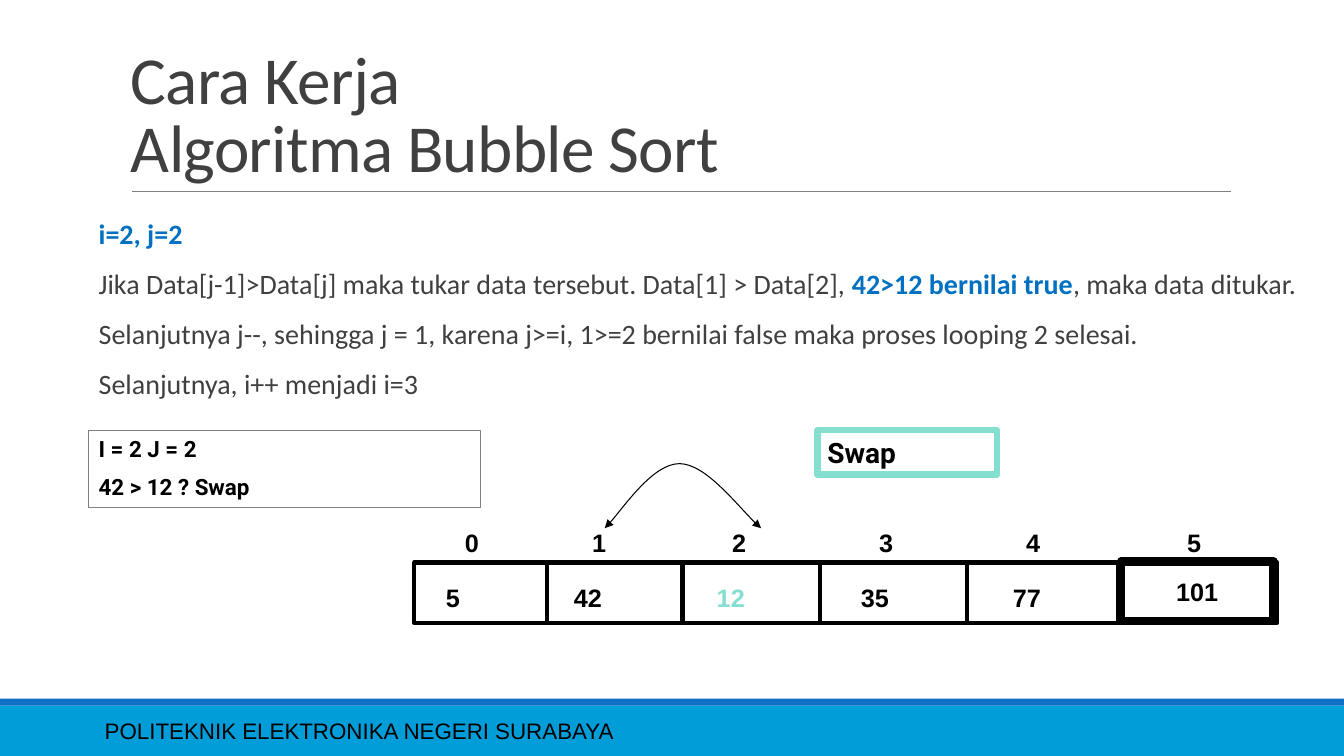
from lxml import etree
from pptx import Presentation
from pptx.dml.color import RGBColor
from pptx.enum.shapes import MSO_CONNECTOR, MSO_SHAPE
from pptx.enum.text import MSO_ANCHOR, PP_ALIGN
from pptx.oxml.ns import qn
from pptx.util import Pt

RECTANGLE = MSO_SHAPE.RECTANGLE
STRAIGHT = MSO_CONNECTOR.STRAIGHT
TOP, MIDDLE, BOTTOM = MSO_ANCHOR.TOP, MSO_ANCHOR.MIDDLE, MSO_ANCHOR.BOTTOM
LEFT, CENTER = PP_ALIGN.LEFT, PP_ALIGN.CENTER

COLORS = {
    "black": "000000",
    "title": "404040",
    "blue": "0070C0",
    "rule": "808080",
    "mint": "85DFD0",
    "footer": "009DD9",
    "stripe": "0F6FC6",
}

# Index, index centre, value, value centre
CELLS = [
    ("0", 337, "5", 323.5),
    ("1", 428, "42", 420),
    ("2", 528, "12", 522),
    ("3", 633, "35", 625),
    ("4", 738, "77", 733.5),
]
DIVIDERS = [391, 487.5, 585.5, 690.5, 799]
ARRAY_TOP, ARRAY_BOTTOM = 401.8, 445


def color(name):
    return RGBColor.from_string(COLORS[name])


def add_rectangle(page, left, top, width, height, fill=None, line=None, weight=1):
    box = page.shapes.add_shape(RECTANGLE, Pt(left), Pt(top), Pt(width), Pt(height))
    box.shadow.inherit = False
    if fill:
        box.fill.solid()
        box.fill.fore_color.rgb = color(fill)
    else:
        box.fill.background()
    if line:
        box.line.color.rgb = color(line)
        box.line.width = Pt(weight)
    else:
        box.line.fill.background()
    return box


def add_line(page, x1, y1, x2, y2, line, weight):
    rule = page.shapes.add_connector(STRAIGHT, Pt(x1), Pt(y1), Pt(x2), Pt(y2))
    rule.line.color.rgb = color(line)
    rule.line.width = Pt(weight)
    etree.SubElement(rule._element.spPr, qn("a:effectLst"))


def write(box, paragraphs, font, size, align=LEFT, anchor=TOP, before=0, after=0,
          spacing=None, tracking=None):
    """Fill a shape with paragraphs, each a list of (text, colour, bold) runs."""
    frame = box.text_frame
    frame.word_wrap = True
    frame.vertical_anchor = anchor
    for number, runs in enumerate(paragraphs):
        para = frame.add_paragraph() if number else frame.paragraphs[0]
        para.alignment = align
        para.space_before = Pt(before if number else 0)
        para.space_after = Pt(after)
        if spacing:
            para.line_spacing = spacing
        for text, tint, bold in runs:
            if text == "\n":
                para.add_line_break()
                continue
            span = para.add_run()
            span.text = text
            span.font.name = font
            span.font.size = Pt(size)
            span.font.bold = bold
            span.font.color.rgb = color(tint)
            if tracking:
                span.font._element.set("spc", str(tracking))


def add_text(page, left, top, width, height, paragraphs, font, size, **layout):
    box = page.shapes.add_textbox(Pt(left), Pt(top), Pt(width), Pt(height))
    write(box, paragraphs, font, size, **layout)


def add_label(page, center, top, text, tint="black"):
    add_text(page, center - 25, top, 50, 29.5, [[(text, tint, True)]], "Arial", 18,
             align=CENTER)


def add_swap_arrow(page, start, points):
    """Draw a double-headed Bezier arrow; points holds three per curve."""
    builder = page.shapes.build_freeform(Pt(start[0]), Pt(start[1]))
    builder.add_line_segments([(Pt(x), Pt(y)) for x, y in points], close=False)
    arrow = builder.convert_to_shape()
    arrow.shadow.inherit = False
    arrow.fill.background()
    arrow.line.color.rgb = color("black")
    arrow.line.width = Pt(0.75)
    segments = list(arrow._element.iter(qn("a:lnTo")))
    for first in range(0, len(segments), 3):
        curve = etree.Element(qn("a:cubicBezTo"))
        segments[first].addprevious(curve)
        for segment in segments[first:first + 3]:
            curve.append(segment[0])
            segment.getparent().remove(segment)
    for end in ("a:headEnd", "a:tailEnd"):
        etree.SubElement(arrow.line._get_or_add_ln(), qn(end), type="triangle")


def add_frame(page):
    add_rectangle(page, 0, 504, 960, 36, fill="footer")
    add_rectangle(page, 0, 499, 960, 5, fill="stripe")
    add_line(page, 94.3, 136.8, 879.1, 136.8, "rule", 0.5)
    add_text(page, 67.7, 507.6, 605.5, 28.8,
             [[("POLITEKNIK ELEKTRONIKA NEGERI SURABAYA", "black", False)]],
             "Arial", 16, anchor=MIDDLE)
    add_text(page, 86.4, 22.3, 792, 114.5,
             [[("Cara Kerja", "title", False), ("\n", "title", False),
               ("Algoritma Bubble Sort", "title", False)]],
             "Calibri", 48, anchor=BOTTOM, spacing=0.85, tracking=-50)


def add_explanation(page):
    paragraphs = [
        [("i=2, j=2", "blue", True)],
        [("Jika Data[j-1]>Data[j] maka tukar data tersebut. Data[1] > Data[2], ",
          "title", False),
         ("42>12 bernilai true", "blue", True),
         (", maka data ditukar.", "title", False)],
        [("Selanjutnya j--, sehingga j = 1, karena j>=i, 1>=2 bernilai false "
          "maka proses looping 2 selesai.", "title", False)],
        [("Selanjutnya, i++ menjadi i=3", "title", False)],
    ]
    add_text(page, 63.4, 154.1, 872, 140, paragraphs, "Calibri", 20,
             before=12, after=2, spacing=0.9)


def add_array(page):
    add_rectangle(page, 296, ARRAY_TOP, 616.3, ARRAY_BOTTOM - ARRAY_TOP,
                  line="black", weight=3)
    for x in DIVIDERS:
        add_line(page, x, ARRAY_TOP, x, ARRAY_BOTTOM, "black", 3)
    for index, index_center, value, value_center in CELLS:
        add_label(page, index_center, 373, index)
        add_label(page, value_center, 412.3, value, "mint" if value == "12" else "black")
    add_label(page, 853, 373, "5")
    sorted_cell = add_rectangle(page, 800.6, 401, 109, 42.5, line="black", weight=6)
    write(sorted_cell, [[("101", "black", True)]], "Arial", 18, align=CENTER,
          anchor=MIDDLE)


def main():
    deck = Presentation()
    deck.slide_width, deck.slide_height = Pt(960), Pt(540)
    page = deck.slides.add_slide(deck.slide_layouts[6])
    add_frame(page)
    add_explanation(page)
    add_swap_arrow(page, (432, 377.3),
                   [(440.6, 369.4), (466.6, 331.2), (485.3, 331.2),
                    (504, 331.2), (531.4, 367.2), (543.6, 377.3)])
    comparison = add_rectangle(page, 63.4, 307.2, 280, 55.4, line="rule", weight=0.75)
    write(comparison, [[("I = 2 J = 2", "black", True)],
                       [("42 > 12 ? Swap", "black", True)]], "Roboto", 16, before=8)
    action = add_rectangle(page, 583.9, 307.4, 128.2, 31.7, line="mint", weight=4.5)
    write(action, [[("Swap", "black", True)]], "Roboto", 20)
    add_array(page)
    deck.save("out.pptx")


if __name__ == "__main__":
    main()
